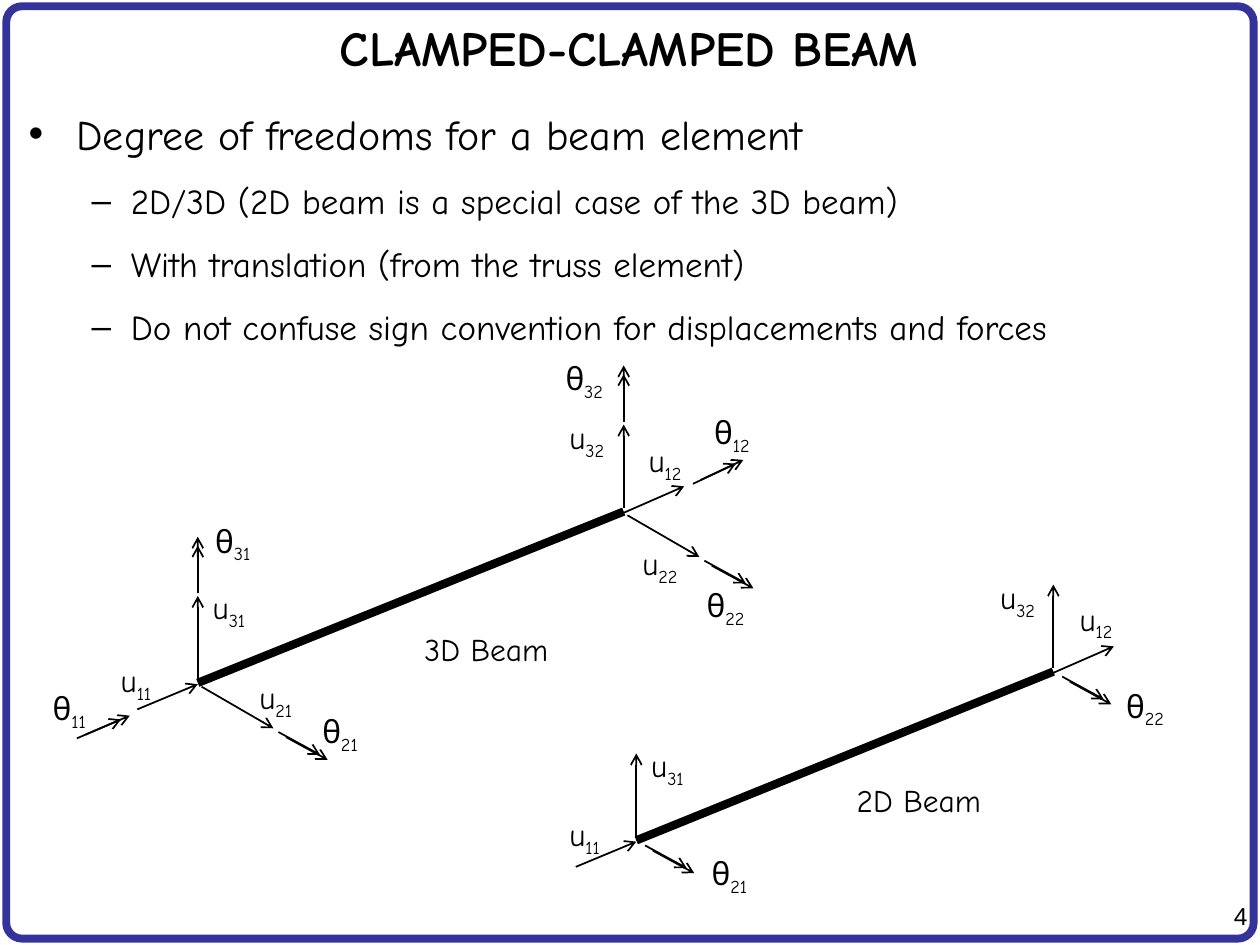
from lxml import etree
from pptx import Presentation
from pptx.dml.color import RGBColor
from pptx.enum.shapes import MSO_CONNECTOR, MSO_SHAPE
from pptx.enum.text import MSO_ANCHOR, MSO_AUTO_SIZE, PP_ALIGN
from pptx.oxml.ns import qn
from pptx.util import Inches, Pt

STRAIGHT = MSO_CONNECTOR.STRAIGHT
ROUNDED = MSO_SHAPE.ROUNDED_RECTANGLE
MIDDLE, TOP = MSO_ANCHOR.MIDDLE, MSO_ANCHOR.TOP
LEFT, CENTER, RIGHT = PP_ALIGN.LEFT, PP_ALIGN.CENTER, PP_ALIGN.RIGHT
FIT_SHAPE = MSO_AUTO_SIZE.SHAPE_TO_FIT_TEXT
FONT, BLACK, NAVY = "Comic Neue", "000000", "333399"

# Arrows as (start, end, shift of the second head), relative to a beam node.
# A shift is given for rotations, which have a double head.
U1_IN = ((-0.48, 0.21), (0, 0.01), None)
U1_OUT = ((0, 0.01), (0.48, -0.2), None)
U2 = ((0.03, 0.03), (0.6, 0.36), None)
U3 = ((0, -0.03), (0, -0.69), None)
T1_IN = ((-0.96, 0.44), (-0.61, 0.29), (0.07, -0.03))
T1_OUT = ((0.55, -0.22), (0.89, -0.38), (0.06, -0.03))
T2 = ((0.64, 0.39), (0.97, 0.57), (0.06, 0.04))
T2_NEAR = ((0.07, 0.04), (0.4, 0.22), (0.06, 0.04))
T3 = ((0, -0.71), (0, -1.09), (0, -0.07))

# Each node: position, arrows, labels as (symbol, index, dx, dy).
BEAM_3D = [
    ((1.57, 5.42), [U1_IN, U2, U3, T1_IN, T2, T3],
     [("u", "11", -0.71, -0.22), ("u", "21", 0.39, -0.09),
      ("u", "31", 0.02, -0.8), ("θ", "11", -1.25, 0),
      ("θ", "21", 0.89, 0.18), ("θ", "31", 0.04, -1.33)]),
    ((4.95, 4.06), [U1_OUT, U2, U3, T1_OUT, T2, T3],
     [("u", "12", 0.1, -0.61), ("u", "22", 0.05, 0.21),
      ("u", "32", -0.53, -0.79), ("θ", "12", 0.62, -0.83),
      ("θ", "22", 0.56, 0.54), ("θ", "32", -0.56, -1.26)]),
]
BEAM_2D = [
    ((5.05, 6.67), [U1_IN, U3, T2_NEAR],
     [("u", "11", -0.63, -0.25), ("u", "31", 0.02, -0.8),
      ("θ", "21", 0.5, 0.06)]),
    ((8.36, 5.33), [U1_OUT, U3, T2_NEAR],
     [("u", "12", 0.11, -0.62), ("u", "32", -0.52, -0.79),
      ("θ", "22", 0.48, 0.07)]),
]
POINTS = [
    "2D/3D (2D beam is a special case of the 3D beam)",
    "With translation (from the truss element)",
    "Do not confuse sign convention for displacements and forces",
]


def rgb(color):
    return RGBColor.from_string(color)


def add_run(p, text, size, font=FONT, bold=False):
    r = p.add_run()
    r.text = text
    r.font.size = Pt(size)
    r.font.name = font
    r.font.bold = bold
    r.font.color.rgb = rgb(BLACK)
    return r


def add_text_box(shapes, box, align=LEFT, anchor=TOP, wrap=True):
    """Add an empty text box and return its text frame."""
    tf = shapes.add_textbox(*map(Inches, box)).text_frame
    tf.word_wrap = wrap
    tf.vertical_anchor = anchor
    tf.paragraphs[0].alignment = align
    return tf


def add_line(shapes, start, end, width, arrow=False):
    c = shapes.add_connector(STRAIGHT, *map(Inches, (*start, *end)))
    c.line.color.rgb = rgb(BLACK)
    c.line.width = Pt(width)
    if arrow:
        ln = c.line._get_or_add_ln()
        etree.SubElement(ln, qn("a:tailEnd"), type="arrow")
    etree.SubElement(c._element.spPr, qn("a:effectLst"))


def add_frame(s, box):
    sp = s.shapes.add_shape(ROUNDED, *map(Inches, box))
    sp.adjustments[0] = 0.017
    sp.shadow.inherit = False
    sp.fill.background()
    sp.line.color.rgb = rgb(NAVY)
    sp.line.width = Pt(4.5)


def add_title(s, box, text):
    tf = add_text_box(s.shapes, box, CENTER, MIDDLE)
    add_run(tf.paragraphs[0], text, 28, bold=True)


def add_page_number(s, box, number):
    tf = add_text_box(s.shapes, box, RIGHT)
    tf.auto_size = FIT_SHAPE
    add_run(tf.paragraphs[0], number, 14, font="Arial")


def set_bullet(p, char, left, hanging):
    pPr = p._p.get_or_add_pPr()
    pPr.set("marL", str(Inches(left)))
    pPr.set("indent", str(-Inches(hanging)))
    etree.SubElement(pPr, qn("a:buFont"), typeface="Arial")
    etree.SubElement(pPr, qn("a:buChar"), char=char)


def add_bullets(s, box, heading, points):
    tf = add_text_box(s.shapes, box)
    for i, text in enumerate([heading, *points]):
        p = tf.add_paragraph() if i else tf.paragraphs[0]
        p.level = 1 if i else 0
        p.space_before = Pt(12)
        if i:
            set_bullet(p, "–", 0.81, 0.31)
        else:
            set_bullet(p, "•", 0.38, 0.38)
        add_run(p, text, 20 if i else 24)


def add_symbol(shapes, x, y, symbol, index):
    """Write a symbol with its index as a subscript."""
    tf = add_text_box(shapes, (x, y, 0.57, 0.4))
    tf.auto_size = FIT_SHAPE
    p = tf.paragraphs[0]
    add_run(p, symbol, 18)
    sub = add_run(p, index, 18)
    sub._r.get_or_add_rPr().set("baseline", "-25000")


def add_node(shapes, origin, arrows, labels):
    def at(point, shift=(0, 0)):
        return tuple(sum(v) for v in zip(origin, point, shift))

    for start, end, second in arrows:
        for shift in [(0, 0), second] if second else [(0, 0)]:
            add_line(shapes, at(start, shift), at(end, shift), 1, arrow=True)
    for symbol, index, dx, dy in labels:
        add_symbol(shapes, *at((dx, dy)), symbol, index)


def add_beam(s, nodes, caption, caption_box):
    shapes = s.shapes.add_group_shape().shapes
    add_line(shapes, nodes[0][0], nodes[1][0], 4.75)
    for node in nodes:
        add_node(shapes, *node)
    tf = add_text_box(s.shapes, caption_box, wrap=False)
    tf.auto_size = FIT_SHAPE
    add_run(tf.paragraphs[0], caption, 18)


def main():
    prs = Presentation()
    prs.slide_width, prs.slide_height = Inches(10), Inches(7.5)
    s = prs.slides.add_slide(prs.slide_layouts[6])
    add_frame(s, (0.05, 0.05, 9.9, 7.4))
    add_page_number(s, (9.46, 7.1, 0.54, 0.33), "4")
    add_title(s, (0.04, 0.05, 9.9, 0.65), "CLAMPED-CLAMPED BEAM")
    add_bullets(s, (0.13, 0.81, 9.74, 6.42),
                "Degree of freedoms for a beam element", POINTS)
    add_beam(s, BEAM_3D, "3D Beam", (3.27, 4.95, 1.24, 0.4))
    add_beam(s, BEAM_2D, "2D Beam", (6.7, 6.15, 1.25, 0.4))
    prs.save("out.pptx")


if __name__ == "__main__":
    main()
